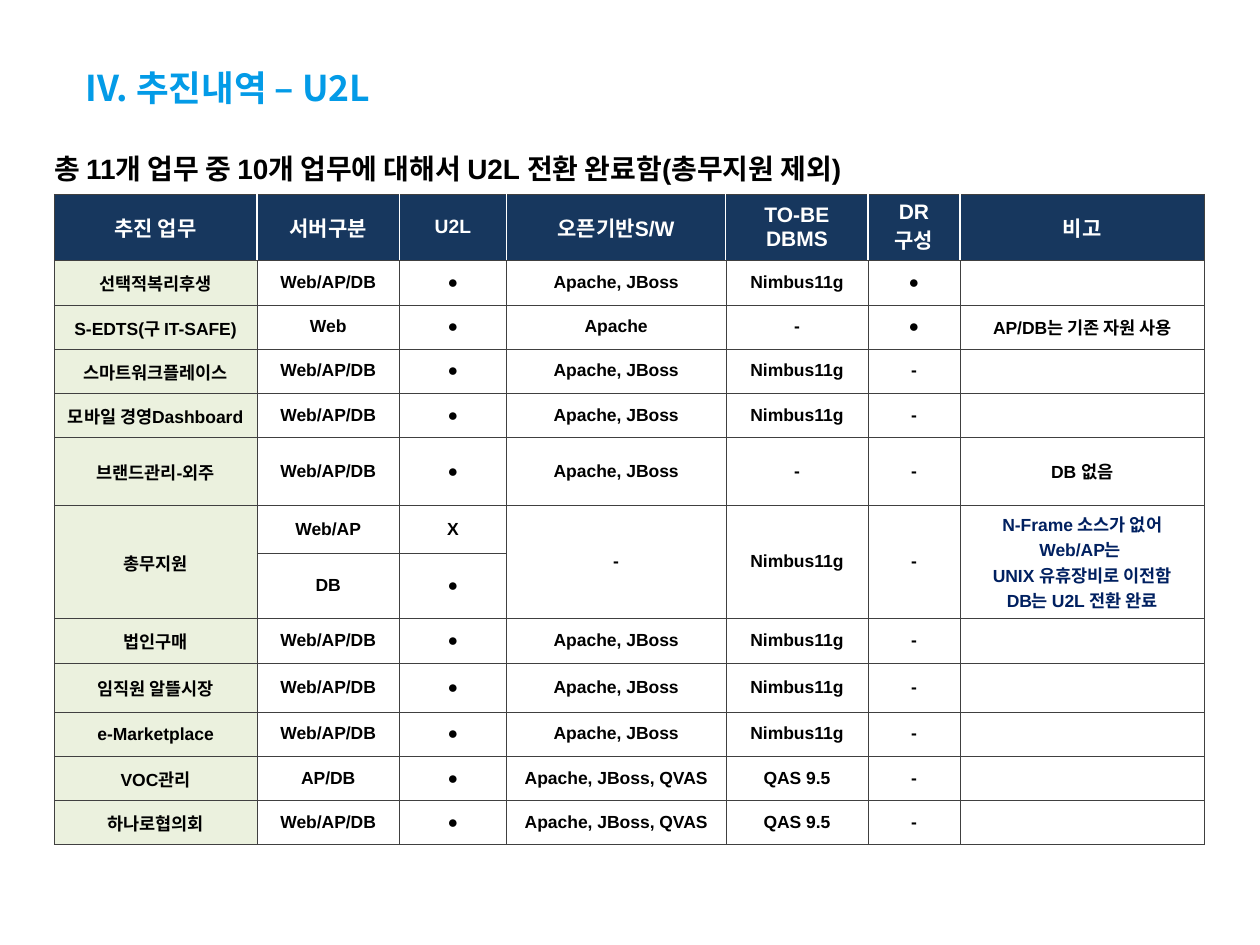
from lxml import etree
from pptx import Presentation
from pptx.dml.color import RGBColor
from pptx.enum.text import MSO_ANCHOR, MSO_AUTO_SIZE, PP_ALIGN
from pptx.oxml.ns import qn
from pptx.util import Cm, Pt

LEFT, CENTER = PP_ALIGN.LEFT, PP_ALIGN.CENTER
MIDDLE, TOP = MSO_ANCHOR.MIDDLE, MSO_ANCHOR.TOP
NO_FIT = MSO_AUTO_SIZE.NONE

COLORS = {
    "title": "039BE7", "text": "000000", "note": "002060", "white": "FFFFFF",
    "header": "17375E", "task": "EBF1DE", "grid": "404040",
}
KOREAN, LATIN = "Noto Sans CJK KR", "Arial"


def write(frame, text, size, color, align=CENTER, face=LATIN):
    """Fill a text frame, one paragraph per line, all bold."""
    frame.text = text
    for para in frame.paragraphs:
        para.alignment = align
        font = para.font
        font.size, font.bold, font.name = Pt(size), True, face
        font.color.rgb = RGBColor.from_string(COLORS[color])
        defaults = para._p.pPr.find(qn("a:defRPr"))
        etree.SubElement(defaults, qn("a:ea"), typeface=KOREAN)
        if not text:
            etree.SubElement(para._p, qn("a:endParaRPr"), sz=str(size * 100))


def set_borders(cell, sides):
    """Draw cell borders; sides maps L, R, T, B to (color, points)."""
    properties = cell._tc.get_or_add_tcPr()
    for index, side in enumerate("LRTB"):
        color, points = sides[side]
        line = etree.Element(qn(f"a:ln{side}"), w=str(int(Pt(points))))
        fill = etree.SubElement(line, qn("a:solidFill"))
        etree.SubElement(fill, qn("a:srgbClr"), val=COLORS[color])
        properties.insert(index, line)


deck = Presentation()
deck.slide_width, deck.slide_height = Cm(25.4), Cm(19.05)
page = deck.slides.add_slide(deck.slide_layouts[5])

# Title
title = page.shapes.title
title.left, title.top, title.width, title.height = Cm(1.73), Cm(1.17), Cm(21.44), Cm(1.19)
frame = title.text_frame
frame.margin_left = 0
frame.vertical_anchor = MIDDLE
frame.auto_size = NO_FIT
write(frame, "IV. 추진내역 – U2L", 20.3, "title", LEFT, KOREAN)

# Table contents
HEADERS = ["추진 업무", "서버구분", "U2L", "오픈기반S/W", "TO-BE\nDBMS", "DR\n구성", "비고"]
ALL, STACK, DB, PAS = "Web/AP/DB", "Apache, JBoss", "Nimbus11g", "QAS 9.5"
PAS_STACK = STACK + ", QVAS"
NOTE = "N-Frame 소스가 없어\nWeb/AP는 \nUNIX 유휴장비로 이전함\nDB는 U2L 전환 완료"
ROWS = [
    ["선택적복리후생", ALL, "●", STACK, DB, "●", ""],
    ["S-EDTS(구 IT-SAFE)", "Web", "●", "Apache", "-", "●", "AP/DB는 기존 자원 사용"],
    ["스마트워크플레이스", ALL, "●", STACK, DB, "-", ""],
    ["모바일 경영Dashboard", ALL, "●", STACK, DB, "-", ""],
    ["브랜드관리-외주", ALL, "●", STACK, "-", "-", "DB 없음"],
    ["총무지원", "Web/AP", "X", "-", DB, "-", NOTE],
    [None, "DB", "●", None, None, None, None],
    ["법인구매", ALL, "●", STACK, DB, "-", ""],
    ["임직원 알뜰시장", ALL, "●", STACK, DB, "-", ""],
    ["e-Marketplace", ALL, "●", STACK, DB, "-", ""],
    ["VOC관리", "AP/DB", "●", PAS_STACK, PAS, "-", ""],
    ["하나로협의회", ALL, "●", PAS_STACK, PAS, "-", ""],
]
WIDTHS = [4.09, 2.87, 2.16, 4.42, 2.87, 1.85, 4.93]
HEIGHTS = [1.3] + [0.89] * 4 + [1.37, 0.97, 0.97, 0.89, 0.99] + [0.89] * 3

# Table grid
table = page.shapes.add_table(
    len(HEIGHTS), len(WIDTHS), Cm(1.09), Cm(3.91), Cm(sum(WIDTHS)), Cm(sum(HEIGHTS))
).table
table.first_row = table.horz_banding = False
for column, width in zip(table.columns, WIDTHS):
    column.width = Cm(width)
for row, height in zip(table.rows, HEIGHTS):
    row.height = Cm(height)

# Table cells; None continues the cell above
last = len(WIDTHS) - 1
for r, values in enumerate([HEADERS] + ROWS):
    for c, value in enumerate(values):
        cell = table.cell(r, c)
        cell.vertical_anchor = MIDDLE
        fill = "header" if r == 0 else "task" if c == 0 else None
        if fill:
            cell.fill.solid()
            cell.fill.fore_color.rgb = RGBColor.from_string(COLORS[fill])
        else:
            cell.fill.background()
        sides = dict.fromkeys("LRTB", ("grid", 0.25))
        if r == 0:
            if c > 0:
                sides["L"] = ("white", 1)
            if c < last:
                sides["R"] = ("white", 1)
            write(cell.text_frame, value, 11 if value == "U2L" else 12, "white")
        else:
            if c == 0:
                cell.margin_left = cell.margin_right = cell.margin_top = Cm(0.03)
                cell.margin_bottom = 0
            write(cell.text_frame, value or "", 10, "note" if value == NOTE else "text")
        set_borders(cell, sides)
        if value is None:
            table.cell(r - 1, c).merge(cell)

# Summary line above the table
box = page.shapes.add_textbox(Cm(1.09), Cm(2.92), Cm(23.39), Cm(0.81))
frame = box.text_frame
frame.word_wrap = True
frame.vertical_anchor = TOP
frame.margin_left = frame.margin_right = frame.margin_top = frame.margin_bottom = 0
write(frame, "총 11개 업무 중 10개 업무에 대해서 U2L 전환 완료함(총무지원 제외)", 16, "text", LEFT)
frame.paragraphs[0].line_spacing = 1.2

deck.save("out.pptx")
